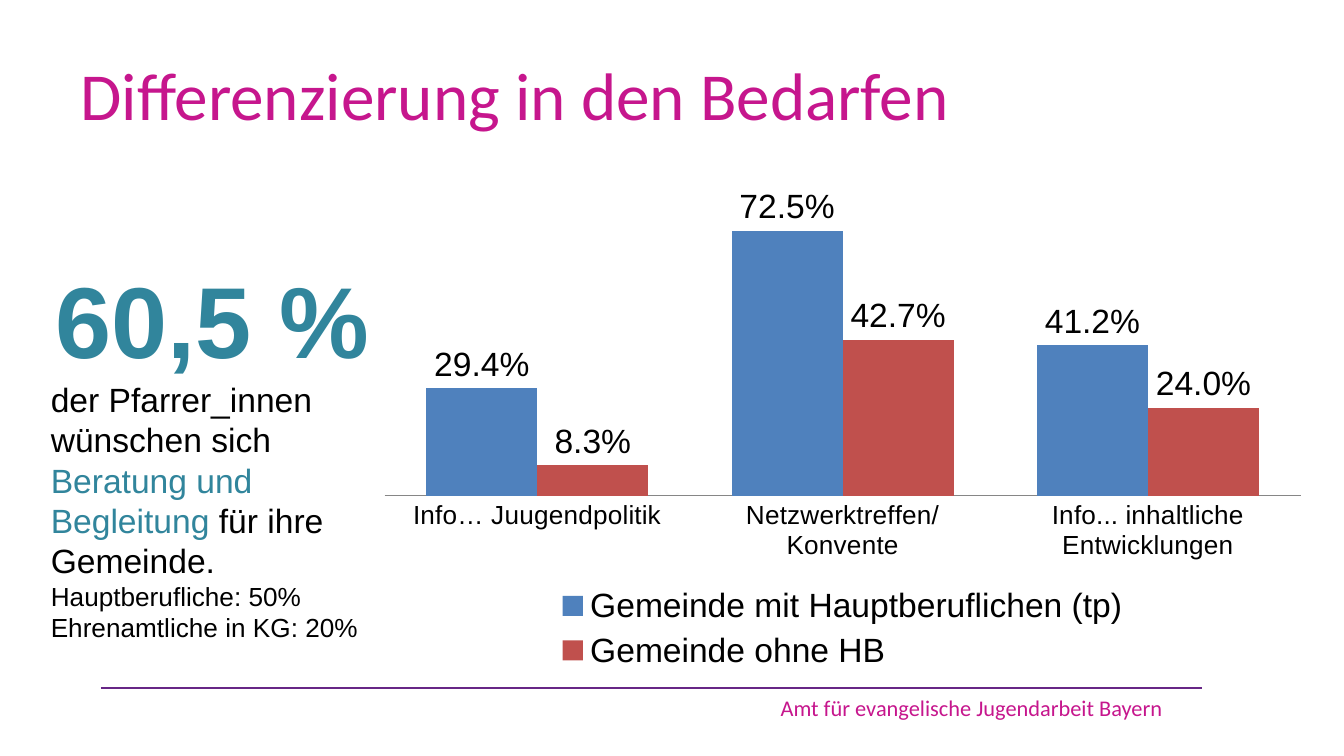
from lxml import etree
from pptx import Presentation
from pptx.chart.data import CategoryChartData
from pptx.dml.color import RGBColor
from pptx.enum import chart as charts, shapes, text
from pptx.oxml.ns import qn
from pptx.util import Inches, Pt

MAGENTA, TEAL, BLACK = "C6168D", "31859C", "000000"


def color(hex_string):
    return RGBColor.from_string(hex_string)


def set_font(font, size, hex_string=BLACK, name="Arial", bold=False):
    font.size, font.name, font.bold = Pt(size), name, bold
    font.color.rgb = color(hex_string)


def add_text_box(slide, left, top, width, height, anchor=text.MSO_ANCHOR.TOP):
    shape = slide.shapes.add_textbox(*map(Inches, (left, top, width, height)))
    frame = shape.text_frame
    frame.word_wrap = True
    frame.vertical_anchor = anchor
    return frame


def add_line_of_text(slide, box, content, size):
    paragraph = add_text_box(slide, *box, text.MSO_ANCHOR.MIDDLE).paragraphs[0]
    paragraph.text = content
    set_font(paragraph.font, size, MAGENTA, "Calibri")


def add_footer_rule(slide):
    line = slide.shapes.add_connector(
        shapes.MSO_CONNECTOR.STRAIGHT, Inches(0.75), Inches(5.12), Inches(8.94), Inches(5.12))
    line.line.color.rgb = color("672686")
    line.line.width = Pt(1)
    etree.SubElement(line._element.spPr, qn("a:effectLst"))


def add_key_figure(slide):
    frame = add_text_box(slide, 0.28, 1.87, 2.6, 3)
    figure = frame.paragraphs[0]
    figure.text = "60,5 %"
    figure.alignment = text.PP_ALIGN.CENTER
    set_font(figure.font, 54, TEAL, bold=True)

    statement = frame.add_paragraph()
    set_font(statement.font, 18)
    for content, hex_string in (
        ("der Pfarrer_innen wünschen sich ", BLACK),
        ("Beratung und Begleitung ", TEAL),
        ("für ihre Gemeinde.", BLACK),
    ):
        run = statement.add_run()
        run.text = content
        set_font(run.font, 18, hex_string)

    for content in ("Hauptberufliche: 50%", "Ehrenamtliche in KG: 20%"):
        paragraph = frame.add_paragraph()
        paragraph.text = content
        set_font(paragraph.font, 14)


def set_plot_layout(chart, **fractions):
    plot_area = chart._chartSpace.chart.plotArea
    for old_layout in plot_area.findall(qn("c:layout")):
        plot_area.remove(old_layout)
    layout = etree.Element(qn("c:layout"))
    plot_area.insert(0, layout)
    manual = etree.SubElement(layout, qn("c:manualLayout"))
    settings = {"layoutTarget": "inner", "xMode": "edge", "yMode": "edge", **fractions}
    for tag, value in settings.items():
        etree.SubElement(manual, qn(f"c:{tag}")).set("val", str(value))


def add_needs_chart(slide):
    data = CategoryChartData(number_format="0.0%")
    data.categories = ["Info… Juugendpolitik", "Netzwerktreffen/Konvente",
                       "Info... inhaltliche Entwicklungen"]
    data.add_series("Gemeinde mit Hauptberuflichen (tp)", (0.294, 0.725, 0.412))
    data.add_series("Gemeinde ohne HB", (0.083, 0.427, 0.24))
    chart = slide.shapes.add_chart(
        charts.XL_CHART_TYPE.COLUMN_CLUSTERED,
        Inches(2.72), Inches(1.4), Inches(7.1), Inches(3.63), data).chart
    set_font(chart.font, 18)
    chart.has_title = False
    set_plot_layout(chart, x=0.02, y=0.03, w=0.96, h=0.6)

    # Axes
    chart.value_axis.visible = False
    chart.value_axis.has_major_gridlines = False
    chart.value_axis.minimum_scale, chart.value_axis.maximum_scale = 0, 0.8
    category_axis = chart.category_axis
    category_axis.major_tick_mark = charts.XL_TICK_MARK.NONE
    category_axis.format.line.color.rgb = color("868686")
    set_font(category_axis.tick_labels.font, 14)

    # Legend
    chart.has_legend = True
    chart.legend.position = charts.XL_LEGEND_POSITION.BOTTOM
    chart.legend.include_in_layout = False
    set_font(chart.legend.font, 18)

    # Columns and their labels
    plot = chart.plots[0]
    plot.gap_width, plot.overlap = 75, 0
    plot.vary_by_categories = False
    for series, hex_string in zip(plot.series, ("4F81BD", "C0504D")):
        series.format.fill.solid()
        series.format.fill.fore_color.rgb = color(hex_string)
        labels = series.data_labels
        labels.show_value = True
        labels.number_format, labels.number_format_is_linked = "0.0%", False
        labels.position = charts.XL_LABEL_POSITION.OUTSIDE_END
        set_font(labels.font, 18)


def main():
    # Widescreen page, 16:9
    presentation = Presentation()
    presentation.slide_width = Inches(10)
    presentation.slide_height = Inches(10) * 9 // 16
    slide = presentation.slides.add_slide(presentation.slide_layouts[6])

    # Footer
    add_line_of_text(slide, (5.71, 5.1, 5.11, 0.33), "Amt für evangelische Jugendarbeit Bayern", 12)
    add_footer_rule(slide)

    # Title and content
    add_line_of_text(slide, (0.5, 0.23, 9, 0.94), "Differenzierung in den Bedarfen", 36)
    add_needs_chart(slide)
    add_key_figure(slide)

    presentation.save("out.pptx")


if __name__ == "__main__":
    main()
